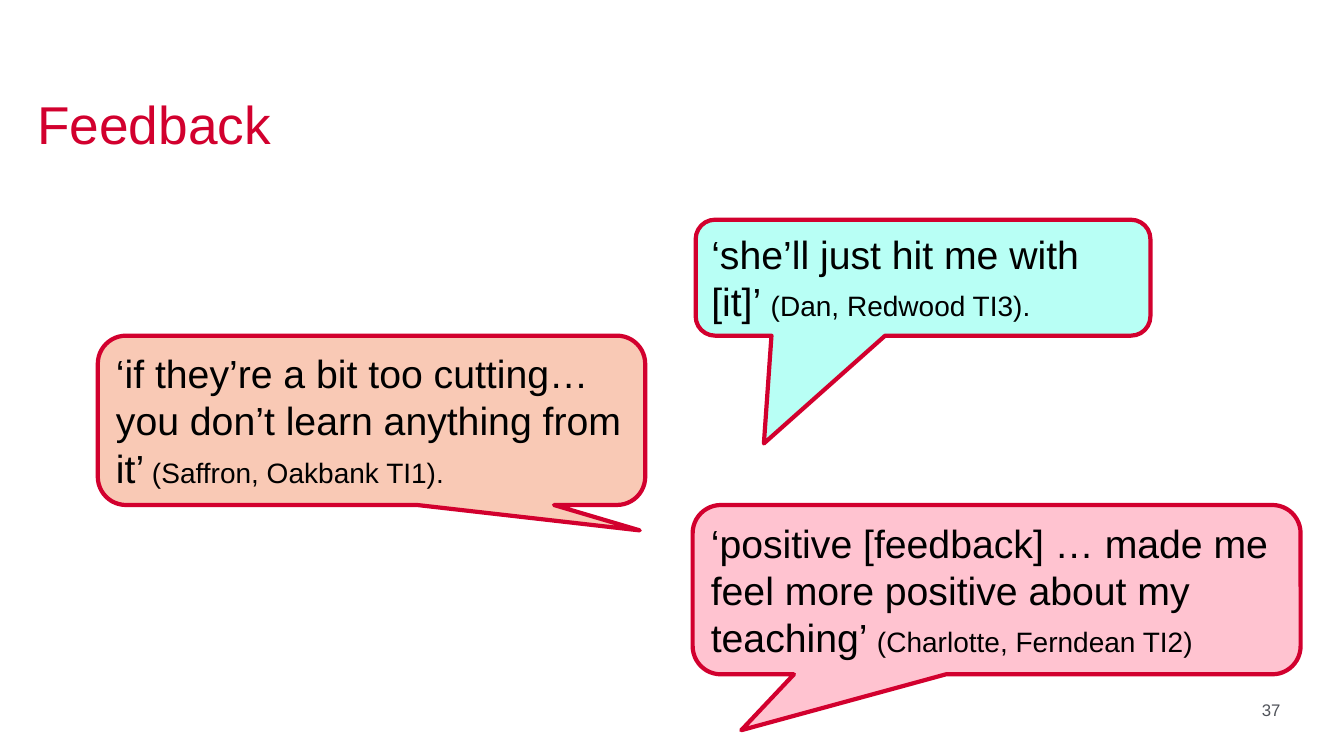
from dataclasses import dataclass

from pptx import Presentation
from pptx.dml.color import RGBColor
from pptx.enum.shapes import MSO_SHAPE
from pptx.enum.text import MSO_ANCHOR, MSO_AUTO_SIZE, PP_ALIGN
from pptx.slide import Slide
from pptx.text.text import _Run
from pptx.util import Inches, Pt

CALLOUT = MSO_SHAPE.ROUNDED_RECTANGULAR_CALLOUT
BOTTOM, MIDDLE, TOP = MSO_ANCHOR.BOTTOM, MSO_ANCHOR.MIDDLE, MSO_ANCHOR.TOP
LEFT, RIGHT = PP_ALIGN.LEFT, PP_ALIGN.RIGHT
GROW = MSO_AUTO_SIZE.SHAPE_TO_FIT_TEXT

FONT = "Arial"
COLORS = {
    "red": "D2002E",
    "grey": "50535A",
    "black": "000000",
    "aqua": "B8FFF5",
    "peach": "F9C9B5",
    "pink": "FFC3D0",
}


@dataclass
class Label:
    text: str
    box: tuple[float, float, float, float]
    size: int
    color: str
    align: PP_ALIGN
    anchor: MSO_ANCHOR
    wrap: bool


@dataclass
class Quote:
    words: str
    speaker: str
    box: tuple[float, float, float, float]
    tip: tuple[float, float]
    fill: str


LABELS = [
    Label("37", (11.71, 6.94, 0.99, 0.28), 12, "grey", RIGHT, TOP, True),
    Label("Feedback", (0.37, 0.63, 12.07, 0.91), 38, "red", LEFT, BOTTOM, False),
]

QUOTES = [
    Quote("‘she’ll just hit me with [it]’ ", "(Dan, Redwood TI3).",
          (6.9, 2.18, 4.51, 1.15), (-0.35, 1.43), "aqua"),
    Quote("‘if they’re a bit too cutting… you don’t learn anything from it’",
          " (Saffron, Oakbank TI1).",
          (0.97, 3.33, 5.43, 1.68), (0.49, 0.65), "peach"),
    Quote("‘positive [feedback] … made me feel more positive about my teaching’ ",
          "(Charlotte, Ferndean TI2)",
          (6.87, 5.01, 6.03, 1.68), (-0.42, 0.83), "pink"),
]


def rgb(color: str) -> RGBColor:
    return RGBColor.from_string(COLORS[color])


def style_run(run: _Run, size: int, color: str) -> None:
    run.font.name = FONT
    run.font.size = Pt(size)
    run.font.color.rgb = rgb(color)


def draw_label(slide: Slide, label: Label) -> None:
    frame = slide.shapes.add_textbox(*map(Inches, label.box)).text_frame
    frame.margin_left = frame.margin_right = 0
    frame.margin_top = frame.margin_bottom = 0
    frame.word_wrap = label.wrap
    frame.vertical_anchor = label.anchor
    frame.text = label.text
    line = frame.paragraphs[0]
    line.alignment = label.align
    style_run(line.runs[0], label.size, label.color)


def draw_quote(slide: Slide, quote: Quote) -> None:
    bubble = slide.shapes.add_shape(CALLOUT, *map(Inches, quote.box))
    bubble.shadow.inherit = False
    bubble.adjustments[0], bubble.adjustments[1] = quote.tip
    bubble.fill.solid()
    bubble.fill.fore_color.rgb = rgb(quote.fill)
    bubble.line.color.rgb = rgb("red")
    bubble.line.width = Pt(3)

    frame = bubble.text_frame
    frame.word_wrap = True
    frame.auto_size = GROW
    frame.vertical_anchor = MIDDLE
    frame.text = quote.words
    passage = frame.paragraphs[0]
    passage.alignment = LEFT
    passage.add_run().text = quote.speaker
    for run, size in zip(passage.runs, (28, 20)):
        style_run(run, size, "black")


def main() -> None:
    deck = Presentation()
    deck.slide_width, deck.slide_height = Inches(13.33), Inches(7.5)
    slide = deck.slides.add_slide(deck.slide_layouts[6])
    for label in LABELS:
        draw_label(slide, label)
    for quote in QUOTES:
        draw_quote(slide, quote)
    deck.save("out.pptx")


if __name__ == "__main__":
    main()
